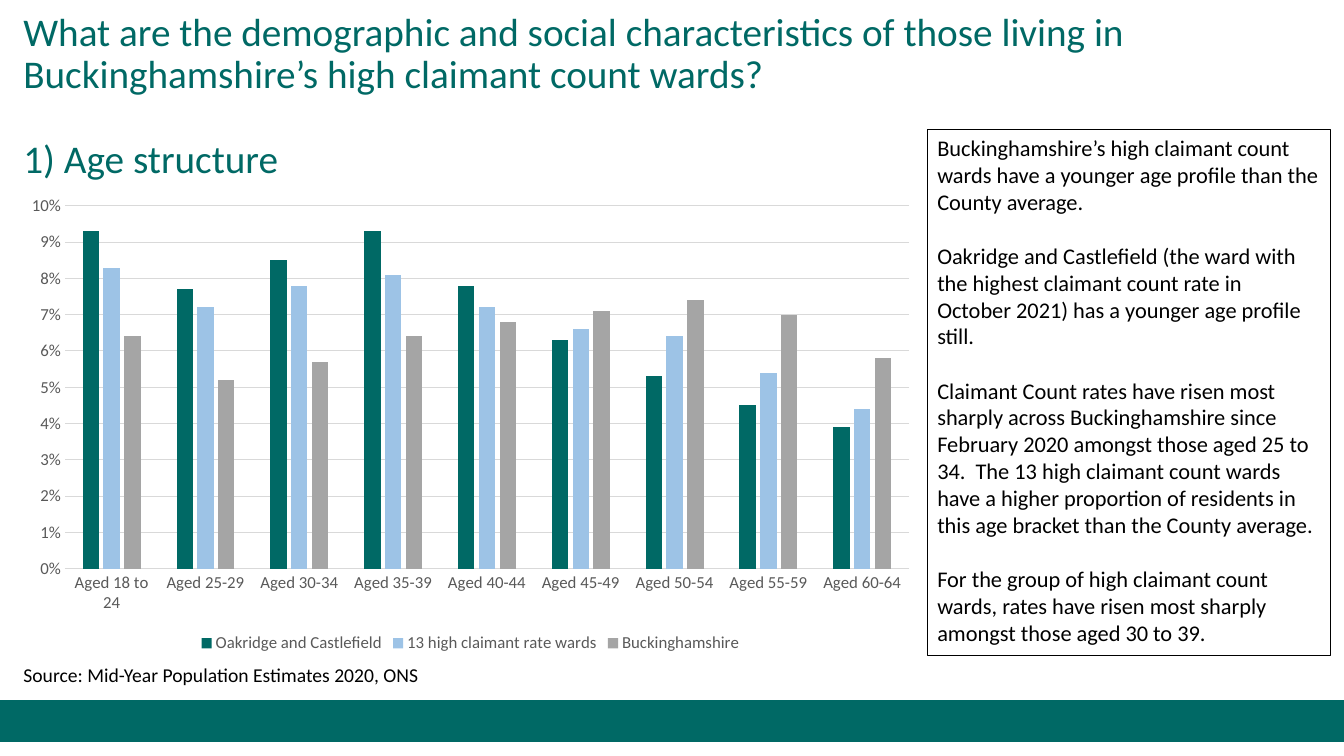
from pptx import Presentation
from pptx.chart.data import CategoryChartData
from pptx.dml.color import RGBColor
from pptx.enum.chart import XL_CHART_TYPE, XL_LEGEND_POSITION, XL_TICK_MARK
from pptx.enum.shapes import MSO_SHAPE
from pptx.enum.text import MSO_ANCHOR, PP_ALIGN
from pptx.util import Inches, Pt

BARS = XL_CHART_TYPE.COLUMN_CLUSTERED
BOTTOM = XL_LEGEND_POSITION.BOTTOM
NO_TICK = XL_TICK_MARK.NONE
RECT = MSO_SHAPE.RECTANGLE
TOP, MIDDLE = MSO_ANCHOR.TOP, MSO_ANCHOR.MIDDLE
LEFT = PP_ALIGN.LEFT

FONT = "Calibri"
TEAL, BLUE, GREY = "006965", "9DC3E6", "A5A5A5"
BLACK, LABEL, RULE = "000000", "595959", "D9D9D9"

deck = Presentation()
deck.slide_width, deck.slide_height = Inches(13.33), Inches(7.5)
slide = deck.slides.add_slide(deck.slide_layouts[6])
shapes = slide.shapes
rgb = RGBColor.from_string


def area(col, row, cols, rows):
    """Turn a place on a grid of 100 columns by 100 rows into slide lengths."""
    wide, high = deck.slide_width / 100, deck.slide_height / 100
    return [int(n) for n in (col * wide, row * high, cols * wide, rows * high)]


def write(shape, *texts, size=16, color=BLACK, gap=0, line=1.0, anchor=TOP):
    """Fill a shape with paragraphs that stand gap points apart."""
    frame = shape.text_frame
    frame.word_wrap = True
    frame.vertical_anchor = anchor
    for i, text in enumerate(texts):
        para = frame.add_paragraph() if i else frame.paragraphs[0]
        para.alignment = LEFT
        para.line_spacing = line
        para.space_before = Pt(gap if i else 0)
        run = para.add_run()
        run.text = text
        run.font.name, run.font.size = FONT, Pt(size)
        run.font.color.rgb = rgb(color)


# Footer band
band = shapes.add_shape(RECT, *area(0, 92.67, 100, 5.33))
band.shadow.inherit = False
band.fill.solid()
band.fill.fore_color.rgb = rgb(TEAL)
band.line.color.rgb = rgb(TEAL)
band.line.width = Pt(1)

# Heading
title = shapes.add_textbox(*area(1, 3.2, 86.25, 19.33))
write(
    title,
    "What are the demographic and social characteristics of those living in "
    "Buckinghamshire’s high claimant count wards?",
    "1) Age structure",
    size=28, color=TEAL, gap=30.7, line=0.9, anchor=MIDDLE,
)

# Age chart
data = CategoryChartData(number_format="0%")
data.categories = ["Aged 18 to 24"] + [f"Aged {n}-{n + 4}" for n in range(25, 65, 5)]
wards = [
    ("Oakridge and Castlefield", TEAL,
     [0.093, 0.077, 0.085, 0.093, 0.078, 0.063, 0.053, 0.045, 0.039]),
    ("13 high claimant rate wards", BLUE,
     [0.083, 0.072, 0.078, 0.081, 0.072, 0.066, 0.064, 0.054, 0.044]),
    ("Buckinghamshire", GREY,
     [0.064, 0.052, 0.057, 0.064, 0.068, 0.071, 0.074, 0.07, 0.058]),
]
for name, color, rates in wards:
    data.add_series(name, rates)
chart = shapes.add_chart(BARS, *area(1, 24.67, 68, 62.27), data).chart
chart.has_title = False
chart.font.name, chart.font.size = FONT, Pt(12)
chart.font.color.rgb = rgb(LABEL)
chart.has_legend = True
chart.legend.position = BOTTOM
chart.legend.include_in_layout = False

plot = chart.plots[0]
plot.gap_width, plot.overlap = 219, -27
plot.vary_by_categories = False
for bars, (name, color, rates) in zip(plot.series, wards):
    bars.format.fill.solid()
    bars.format.fill.fore_color.rgb = rgb(color)

ages, share = chart.category_axis, chart.value_axis
for axis in (ages, share):
    axis.major_tick_mark = axis.minor_tick_mark = NO_TICK
share.minimum_scale, share.maximum_scale, share.major_unit = 0, 0.1, 0.01
share.tick_labels.number_format = "0%"
share.tick_labels.number_format_is_linked = False
share.format.line.fill.background()
for rule in (ages.format.line, share.major_gridlines.format.line):
    rule.color.rgb = rgb(RULE)
    rule.width = Pt(0.75)

# Findings panel
panel = shapes.add_shape(RECT, *area(69, 17.07, 30, 69.6))
panel.shadow.inherit = False
panel.fill.background()
panel.line.color.rgb = rgb(BLACK)
panel.line.width = Pt(0.75)
write(
    panel,
    "Buckinghamshire’s high claimant count wards have a younger age profile "
    "than the County average.",
    "Oakridge and Castlefield (the ward with the highest claimant count rate "
    "in October 2021) has a younger age profile still.",
    "Claimant Count rates have risen most sharply across Buckinghamshire since "
    "February 2020 amongst those aged 25 to 34.  The 13 high claimant count "
    "wards have a higher proportion of residents in this age bracket than the "
    "County average.",
    "For the group of high claimant count wards, rates have risen most sharply "
    "amongst those aged 30 to 39.",
    gap=19.5,
)

# Source line
source = shapes.add_textbox(*area(1, 87.07, 31.05, 4.53))
write(source, "Source: Mid-Year Population Estimates 2020, ONS", size=14)

deck.save("out.pptx")
